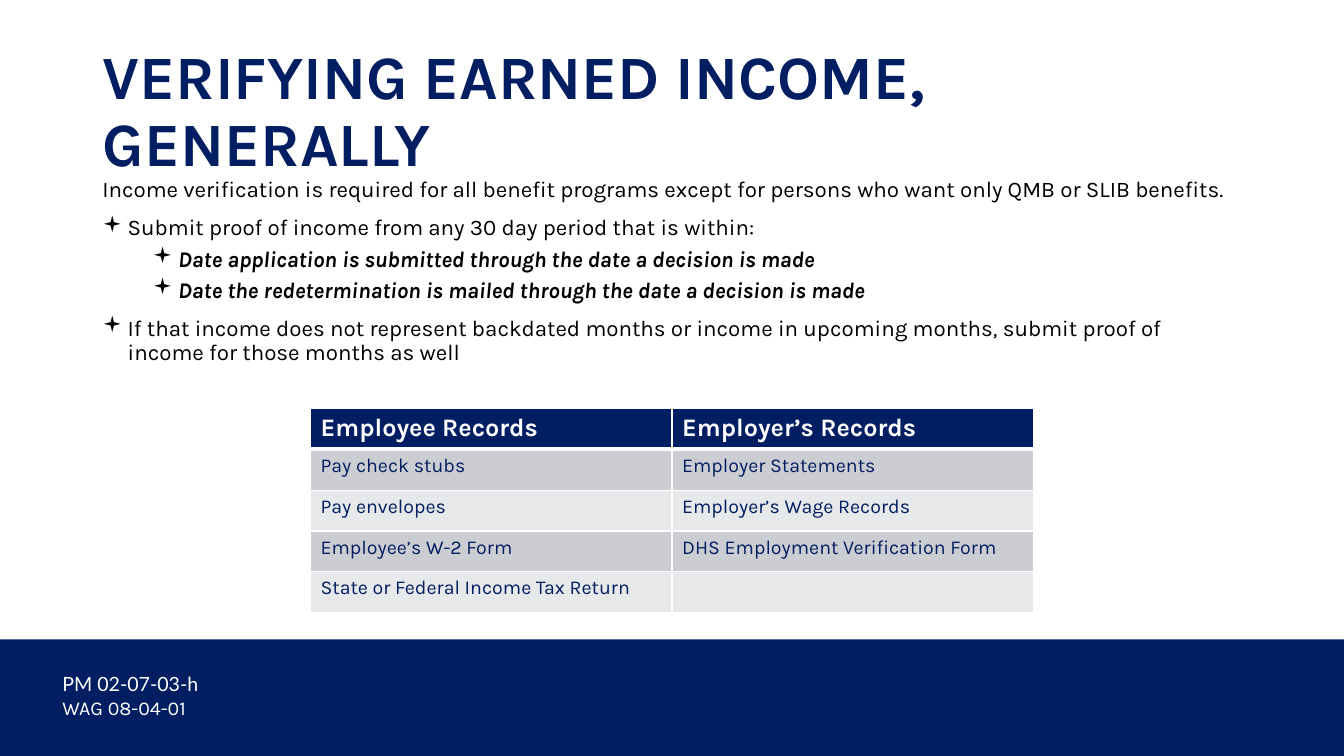
from dataclasses import dataclass

from lxml.etree import SubElement
from pptx import Presentation
from pptx.dml.color import RGBColor
from pptx.enum.shapes import MSO_SHAPE as Preset
from pptx.enum.text import MSO_ANCHOR as Anchor
from pptx.oxml import parse_xml
from pptx.oxml.ns import nsdecls, qn
from pptx.util import Cm, Pt

TITLE = "VERIFYING EARNED INCOME, GENERALLY"
BODY = [
    ("intro", "Income verification\u00a0is required for all benefit programs except for persons who want only QMB or SLIB benefits."),
    ("bullet", "Submit proof of income from any 30 day period that is within:"),
    ("detail", "Date application is submitted through the date a decision is made"),
    ("detail", "Date the redetermination is mailed through the date a decision is made"),
    ("bullet", "If that income does not represent backdated months or income in upcoming months, submit proof of income for those months as well"),
]
RECORDS = [
    ("Employee Records", "Employer’s Records"),
    ("Pay check stubs", "Employer Statements"),
    ("Pay envelopes", "Employer’s Wage Records"),
    ("Employee’s W-2 Form", "DHS Employment Verification Form"),
    ("State or Federal Income Tax Return", ""),
]
REFERENCES = [("PM 02-07-03-h", "Lato"), ("WAG 08-04-01", "Karla")]


@dataclass(frozen=True)
class Theme:
    navy: str = "001E61"
    white: str = "FFFFFF"
    black: str = "000000"
    dark_band: str = "CCCDD2"
    light_band: str = "E7E8EA"
    font: str = "Karla"
    title: int = 44
    body: int = 16
    header: int = 18
    small: int = 14


THEME = Theme()
SLIDE_WIDTH, SLIDE_HEIGHT = Cm(33.87), Cm(19.05)
FOOTER_TOP = Cm(16.11)
TEXT_LEFT, TEXT_WIDTH = Cm(2.33), Cm(29.21)
COLUMN_WIDTH, ROW_HEIGHT = Cm(9.11), Cm(1.03)
LEVELS = {"intro": (0, 0, 10), "bullet": (0, 0.64, 10), "detail": (1, 1.91, 5)}
HANGING = Cm(0.64)


def style(paragraph, size, color, bold=False, italic=False, font=THEME.font):
    for run in paragraph.runs:
        run.font.name = font
        run.font.size = Pt(size)
        run.font.bold = bold
        run.font.italic = italic
        run.font.color.rgb = RGBColor.from_string(color)


def add_text(slide, left, top, width, height, lines, anchor=Anchor.TOP):
    frame = slide.shapes.add_textbox(left, top, width, height).text_frame
    frame.word_wrap = True
    frame.vertical_anchor = anchor
    frame.text = "\n".join(lines)
    return frame.paragraphs


def set_bullet(paragraph, indent):
    properties = paragraph._p.get_or_add_pPr()
    properties.set("marL", str(Cm(indent)))
    properties.set("indent", str(-HANGING))
    SubElement(properties, qn("a:buFont"), typeface="Wingdings")
    SubElement(properties, qn("a:buChar"), char="▪")


def set_borders(cell, top, bottom):
    properties = cell._tc.get_or_add_tcPr()
    widths = {"lnL": 1, "lnR": 1, "lnT": top, "lnB": bottom}
    for position, (side, width) in enumerate(widths.items()):
        properties.insert(position, parse_xml(
            f'<a:{side} {nsdecls("a")} w="{Pt(width)}"><a:solidFill>'
            f'<a:srgbClr val="{THEME.white}"/></a:solidFill></a:{side}>'))


def add_footer(slide):
    band = slide.shapes.add_shape(
        Preset.RECTANGLE, 0, FOOTER_TOP, SLIDE_WIDTH, SLIDE_HEIGHT - FOOTER_TOP)
    band.shadow.inherit = False
    band.fill.solid()
    band.fill.fore_color.rgb = RGBColor.from_string(THEME.navy)
    band.line.fill.background()
    paragraphs = add_text(slide, Cm(1.32), Cm(16.81), Cm(7.72), Cm(2.24),
                          [text for text, font in REFERENCES])
    for paragraph, (text, font) in zip(paragraphs, REFERENCES):
        style(paragraph, THEME.small, THEME.white, font=font)


def add_title(slide):
    paragraph = add_text(slide, TEXT_LEFT, Cm(1.01), TEXT_WIDTH, Cm(3.68),
                         [TITLE], Anchor.MIDDLE)[0]
    paragraph.line_spacing = 0.9
    style(paragraph, THEME.title, THEME.navy, bold=True)


def add_body(slide):
    paragraphs = add_text(slide, TEXT_LEFT, Cm(4.37), TEXT_WIDTH, Cm(5.92),
                          [text for kind, text in BODY])
    for paragraph, (kind, text) in zip(paragraphs, BODY):
        level, indent, space = LEVELS[kind]
        paragraph.level = level
        if indent:
            set_bullet(paragraph, indent)
            paragraph.space_before = Pt(space)
        paragraph.line_spacing = 0.9
        emphasis = kind == "detail"
        style(paragraph, THEME.body, THEME.black, emphasis, emphasis)


def add_records(slide):
    rows, columns = len(RECORDS), len(RECORDS[0])
    width = COLUMN_WIDTH * columns
    table = slide.shapes.add_table(rows, columns, (SLIDE_WIDTH - width) // 2,
                                   Cm(10.29), width, ROW_HEIGHT * rows).table
    for column in table.columns:
        column.width = COLUMN_WIDTH
    for index, record in enumerate(RECORDS):
        table.rows[index].height = ROW_HEIGHT
        header = index == 0
        band = THEME.dark_band if index % 2 else THEME.light_band
        for cell, text in zip(table.rows[index].cells, record):
            cell.text = text
            cell.fill.solid()
            cell.fill.fore_color.rgb = RGBColor.from_string(THEME.navy if header else band)
            set_borders(cell, 3 if index == 1 else 1, 3 if header else 1)
            style(cell.text_frame.paragraphs[0],
                  THEME.header if header else THEME.small,
                  THEME.white if header else THEME.navy, bold=header)


def main():
    presentation = Presentation()
    presentation.slide_width, presentation.slide_height = SLIDE_WIDTH, SLIDE_HEIGHT
    slide = presentation.slides.add_slide(presentation.slide_layouts[6])
    add_footer(slide)
    add_title(slide)
    add_body(slide)
    add_records(slide)
    presentation.save("out.pptx")


if __name__ == "__main__":
    main()
